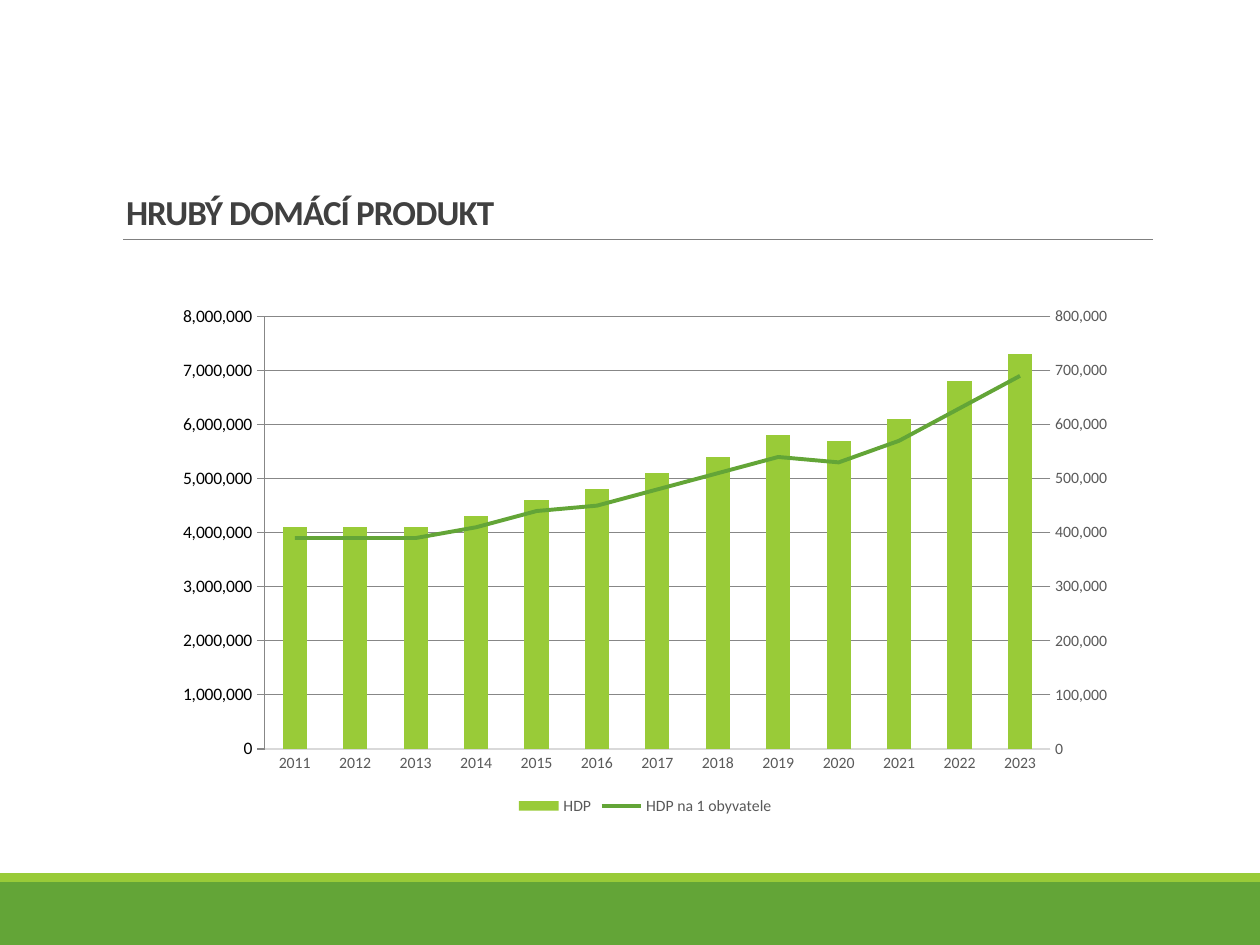
from lxml import etree
from pptx import Presentation
from pptx.chart.axis import ValueAxis
from pptx.chart.data import CategoryChartData
from pptx.dml.color import RGBColor
from pptx.enum.chart import XL_CHART_TYPE as ChartType
from pptx.enum.chart import XL_LEGEND_POSITION as LegendPosition
from pptx.enum.chart import XL_MARKER_STYLE as MarkerStyle
from pptx.enum.chart import XL_TICK_MARK as TickMark
from pptx.enum.shapes import MSO_CONNECTOR as Connector
from pptx.enum.shapes import MSO_SHAPE as Shape
from pptx.enum.text import MSO_ANCHOR as Anchor
from pptx.enum.text import MSO_AUTO_SIZE as AutoSize
from pptx.enum.text import PP_ALIGN as Align
from pptx.oxml import parse_xml
from pptx.oxml.ns import nsdecls, qn
from pptx.util import Inches, Pt

FONT = "Calibri"
GREEN, LIME = "63A537", "99CB38"
TITLE_GRAY, TEXT_GRAY, GRID_GRAY, RULE_GRAY = "404040", "595959", "D9D9D9", "808080"

YEARS = [str(year) for year in range(2011, 2024)]
GDP = [4100000, 4100000, 4100000, 4300000, 4600000, 4800000, 5100000,
       5400000, 5800000, 5700000, 6100000, 6800000, 7300000]
GDP_PER_HEAD = [390000, 390000, 390000, 410000, 440000, 450000, 480000,
                510000, 540000, 530000, 570000, 630000, 690000]

LINE_PLOT = f"""<c:lineChart {nsdecls('c')}>
  <c:grouping val="standard"/><c:varyColors val="0"/>
  <c:marker val="1"/><c:axId val="5001"/><c:axId val="5002"/>
</c:lineChart>"""
RIGHT_VALUE_AXIS = f"""<c:valAx {nsdecls('c')}>
  <c:axId val="5002"/><c:scaling><c:orientation val="minMax"/></c:scaling>
  <c:delete val="0"/><c:axPos val="r"/>
  <c:numFmt formatCode="#,##0" sourceLinked="0"/>
  <c:majorTickMark val="out"/><c:minorTickMark val="none"/>
  <c:tickLblPos val="nextTo"/><c:crossAx val="5001"/><c:crosses val="max"/>
</c:valAx>"""
HIDDEN_CATEGORY_AXIS = f"""<c:catAx {nsdecls('c')}>
  <c:axId val="5001"/><c:scaling><c:orientation val="minMax"/></c:scaling>
  <c:delete val="1"/><c:axPos val="b"/><c:majorTickMark val="none"/>
  <c:minorTickMark val="none"/><c:tickLblPos val="nextTo"/>
  <c:crossAx val="5002"/><c:crosses val="autoZero"/>
</c:catAx>"""


def color(value):
    return RGBColor.from_string(value)


def style_font(font, size, fill):
    font.name, font.size = FONT, Pt(size)
    font.color.rgb = color(fill)


def style_line(line, fill, width):
    line.color.rgb = color(fill)
    line.width = Pt(width)


def add_band(page, left, top, width, height, fill):
    band = page.shapes.add_shape(Shape.RECTANGLE, left, top, width, height)
    band.shadow.inherit = False
    band.fill.solid()
    band.fill.fore_color.rgb = color(fill)
    band.line.fill.background()


def add_footer(page, left, top, width, height):
    stripe = Inches(0.07)
    add_band(page, left, top + stripe, width, height - stripe, GREEN)
    add_band(page, left, top, width, stripe, LIME)


def add_title(page, left, top, width, height):
    """Set the title, with a thin rule along the bottom of its box."""
    bottom = top + height
    rule = page.shapes.add_connector(
        Connector.STRAIGHT, left + Inches(0.08), bottom, left + width, bottom)
    style_line(rule.line, RULE_GRAY, 0.5)
    etree.SubElement(rule._element.spPr, qn("a:effectLst"))

    title = page.shapes.title
    title.left, title.top, title.width, title.height = left, top, width, height
    frame = title.text_frame
    frame.text = "HRUBÝ DOMÁCÍ PRODUKT"
    frame.word_wrap = True
    frame.auto_size = AutoSize.NONE
    frame.vertical_anchor = Anchor.BOTTOM
    para = frame.paragraphs[0]
    para.alignment = Align.LEFT
    para.line_spacing = 0.85
    span = para.runs[0]
    style_font(span.font, 20, TITLE_GRAY)
    span.font.bold = True
    span.font._element.set("spc", "-50")


def move_to_right_axis(chart):
    """Turn the last column series into a line and return its new axis."""
    bars = chart.plots[0]
    series = list(bars.series)[-1]._element
    for flag in series.findall(qn("c:invertIfNegative")):
        series.remove(flag)
    line_plot = parse_xml(LINE_PLOT)
    line_plot.find(qn("c:varyColors")).addnext(series)
    bars._element.addnext(line_plot)
    value_axis = parse_xml(RIGHT_VALUE_AXIS)
    chart.value_axis._element.addnext(value_axis)
    value_axis.addnext(parse_xml(HIDDEN_CATEGORY_AXIS))
    return ValueAxis(value_axis)


def style_value_axis(axis, maximum):
    axis.minimum_scale, axis.maximum_scale = 0, maximum
    axis.major_unit = maximum / 8
    axis.format.line.fill.background()
    labels = axis.tick_labels
    labels.number_format, labels.number_format_is_linked = "#,##0", False
    style_font(labels.font, 9, TEXT_GRAY)


def add_gdp_chart(page, left, top, width, height):
    data = CategoryChartData(number_format="#,##0")
    data.categories = YEARS
    data.add_series("HDP", GDP)
    data.add_series("HDP na 1 obyvatele", GDP_PER_HEAD)
    chart = page.shapes.add_chart(
        ChartType.COLUMN_CLUSTERED, left, top, width, height, data).chart
    style_font(chart.font, 10, "000000")
    chart.has_title = False
    chart.has_legend = True
    chart.legend.position = LegendPosition.BOTTOM
    chart.legend.include_in_layout = False
    style_font(chart.legend.font, 9, TEXT_GRAY)

    right_axis = move_to_right_axis(chart)
    style_value_axis(chart.value_axis, 8000000)
    style_value_axis(right_axis, 800000)
    chart.value_axis.major_tick_mark = TickMark.NONE
    style_line(chart.value_axis.major_gridlines.format.line, GRID_GRAY, 0.75)
    years = chart.category_axis
    years.major_tick_mark = TickMark.NONE
    style_line(years.format.line, GRID_GRAY, 0.75)
    style_font(years.tick_labels.font, 9, TEXT_GRAY)

    bars, lines = chart.plots
    bars.vary_by_categories = False
    bars.gap_width = 150
    bar_fill = bars.series[0].format.fill
    bar_fill.solid()
    bar_fill.fore_color.rgb = color(LIME)
    line = lines.series[0]
    line.smooth = False
    line.marker.style = MarkerStyle.NONE
    style_line(line.format.line, GREEN, 2.25)


def main():
    deck = Presentation()
    deck.slide_width, deck.slide_height = Inches(10), Inches(7.5)
    page = deck.slides.add_slide(deck.slide_layouts.get_by_name("Title Only"))
    add_footer(page, 0, Inches(6.93), deck.slide_width, Inches(0.57))
    add_title(page, Inches(0.9), Inches(0.31), Inches(8.25), Inches(1.59))
    add_gdp_chart(page, Inches(1.3), Inches(2.35), Inches(7.64), Inches(4.16))
    deck.save("out.pptx")


if __name__ == "__main__":
    main()
